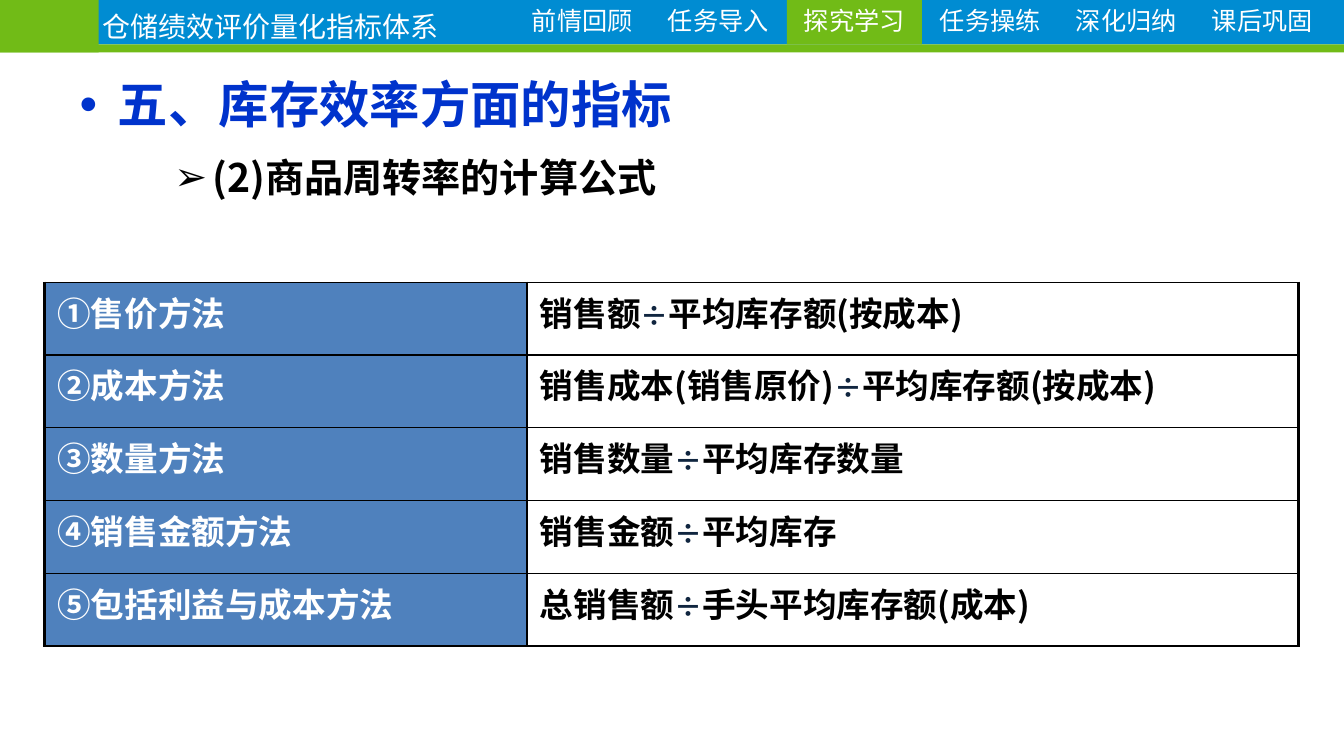
from dataclasses import dataclass

from lxml import etree
from pptx import Presentation
from pptx.dml.color import RGBColor
from pptx.enum.shapes import MSO_SHAPE
from pptx.enum.text import MSO_ANCHOR, MSO_AUTO_SIZE, PP_ALIGN
from pptx.oxml.ns import qn
from pptx.util import Inches, Pt

RECT = MSO_SHAPE.RECTANGLE
TOP, MIDDLE = MSO_ANCHOR.TOP, MSO_ANCHOR.MIDDLE
LEFT, CENTER = PP_ALIGN.LEFT, PP_ALIGN.CENTER
NO_FIT = MSO_AUTO_SIZE.NONE

WHITE = RGBColor(0xFF, 0xFF, 0xFF)
BLACK = RGBColor(0, 0, 0)
SKY = RGBColor(0x00, 0x8C, 0xD2)
GREEN = RGBColor(0x71, 0xBB, 0x17)
TITLE_BLUE = RGBColor(0x00, 0x33, 0xCC)
HEADER_BLUE = RGBColor(0x4F, 0x81, 0xBD)
NAVY = RGBColor(0x10, 0x25, 0x3F)
CJK = "Noto Sans CJK SC"


@dataclass
class Box:
    left: float
    top: float
    width: float
    height: float

    def emu(self):
        return [Inches(v) for v in (self.left, self.top, self.width, self.height)]


@dataclass
class Formula:
    method: str
    dividend: str
    divisor: str


BARS = [
    (Box(0, -0.03, 13.34, 0.47), SKY),
    (Box(0, 0.44, 13.34, 0.08), GREEN),
    (Box(0, -0.03, 0.98, 0.55), GREEN),
]
TABS = ["前情回顾", "任务导入", "探究学习", "任务操练", "深化归纳", "课后巩固"]
ACTIVE_TAB = "探究学习"
TAB_LEFT, TAB_STEP = 5.11, 1.35
FORMULAS = [
    Formula("①售价方法", "销售额", "平均库存额(按成本)"),
    Formula("②成本方法", "销售成本(销售原价)", "平均库存额(按成本)"),
    Formula("③数量方法", "销售数量", "平均库存数量"),
    Formula("④销售金额方法", "销售金额", "平均库存"),
    Formula("⑤包括利益与成本方法", "总销售额", "手头平均库存额(成本)"),
]


def add_run(p, text: str, size: float, color: RGBColor, bold: bool = False, font: str = CJK) -> None:
    r = p.add_run()
    r.text = text
    r.font.size = Pt(size)
    r.font.bold = bold
    r.font.color.rgb = color
    r.font.name = font
    ea = etree.SubElement(r.font._element, qn("a:ea"))
    ea.set("typeface", font)


def add_rect(s, box: Box, color: RGBColor):
    sp = s.shapes.add_shape(RECT, *box.emu())
    sp.shadow.inherit = False
    sp.fill.solid()
    sp.fill.fore_color.rgb = color
    sp.line.fill.background()
    return sp


def add_tab(s, index: int, label: str) -> None:
    box = Box(TAB_LEFT + index * TAB_STEP, -0.03, 1.34, 0.47)
    sp = add_rect(s, box, GREEN) if label == ACTIVE_TAB else s.shapes.add_textbox(*box.emu())
    tf = sp.text_frame
    tf.word_wrap = True
    tf.vertical_anchor = MIDDLE
    p = tf.paragraphs[0]
    p.alignment = CENTER
    add_run(p, label, 18, WHITE)


def add_course_name(s) -> None:
    tf = s.shapes.add_textbox(*Box(0.92, -0.06, 7.96, 0.54).emu()).text_frame
    tf.word_wrap = True
    tf.vertical_anchor = MIDDLE
    p = tf.paragraphs[0]
    p.line_spacing = 1.3
    add_run(p, "仓储绩效评价量化指标体系", 20, WHITE)


def fill_placeholder(sp, box: Box, bullet: str, text: str, size: float, color: RGBColor, font: str) -> None:
    sp.left, sp.top, sp.width, sp.height = box.emu()
    tf = sp.text_frame
    tf.word_wrap = True
    tf.auto_size = NO_FIT
    tf.vertical_anchor = TOP
    p = tf.paragraphs[0]
    pPr = p._p.get_or_add_pPr()
    pPr.set("marL", str(Inches(0.38)))
    pPr.set("indent", str(-Inches(0.38)))
    etree.SubElement(pPr, qn("a:buFont")).set("typeface", "Arial")
    etree.SubElement(pPr, qn("a:buChar")).set("char", bullet)
    p.alignment = LEFT
    p.space_before = Pt(0)
    add_run(p, text, size, color, True, font)


def set_borders(cell, left: float, right: float) -> None:
    """Draw black cell borders; top and bottom are 1 pt."""
    tcPr = cell._tc.get_or_add_tcPr()
    widths = {"a:lnL": left, "a:lnR": right, "a:lnT": 1, "a:lnB": 1}
    for i, (tag, width) in enumerate(widths.items()):
        ln = etree.Element(qn(tag), w=str(Pt(width)))
        fill = etree.SubElement(ln, qn("a:solidFill"))
        etree.SubElement(fill, qn("a:srgbClr")).set("val", str(BLACK))
        tcPr.insert(i, ln)


def add_formula_table(s) -> None:
    table = s.shapes.add_table(len(FORMULAS), 2, *Box(0.44, 2.8, 12.45, 3.61).emu()).table
    table.first_row = False
    table.horz_banding = False
    table.columns[0].width = Inches(4.79)
    table.columns[1].width = Inches(7.66)
    for i, formula in enumerate(FORMULAS):
        method, expression = table.cell(i, 0), table.cell(i, 1)
        for cell in (method, expression):
            cell.margin_left = cell.margin_right = Inches(0.13)
            cell.margin_top = cell.margin_bottom = Inches(0.05)
        method.fill.solid()
        method.fill.fore_color.rgb = HEADER_BLUE
        expression.fill.background()
        set_borders(method, 2.25, 1)
        set_borders(expression, 1, 2.25)
        add_run(method.text_frame.paragraphs[0], formula.method, 24, WHITE, True)
        p = expression.text_frame.paragraphs[0]
        add_run(p, formula.dividend, 24, BLACK, True)
        add_run(p, "÷", 20, NAVY, True)
        add_run(p, formula.divisor, 24, BLACK, True)


def main() -> None:
    prs = Presentation()
    prs.slide_width, prs.slide_height = Inches(13.34), Inches(7.5)
    s = prs.slides.add_slide(prs.slide_layouts[1])
    for box, color in BARS:
        add_rect(s, box, color)
    add_course_name(s)
    for i, label in enumerate(TABS):
        add_tab(s, i, label)
    fill_placeholder(s.shapes.title, Box(0.69, 0.68, 12.01, 0.85), "•",
                     "五、库存效率方面的指标", 36, TITLE_BLUE, "Calibri")
    fill_placeholder(s.placeholders[1], Box(1.63, 1.47, 10.08, 0.7), "➢",
                     "(2)商品周转率的计算公式", 28, BLACK, CJK)
    add_formula_table(s)
    prs.save("out.pptx")


if __name__ == "__main__":
    main()
